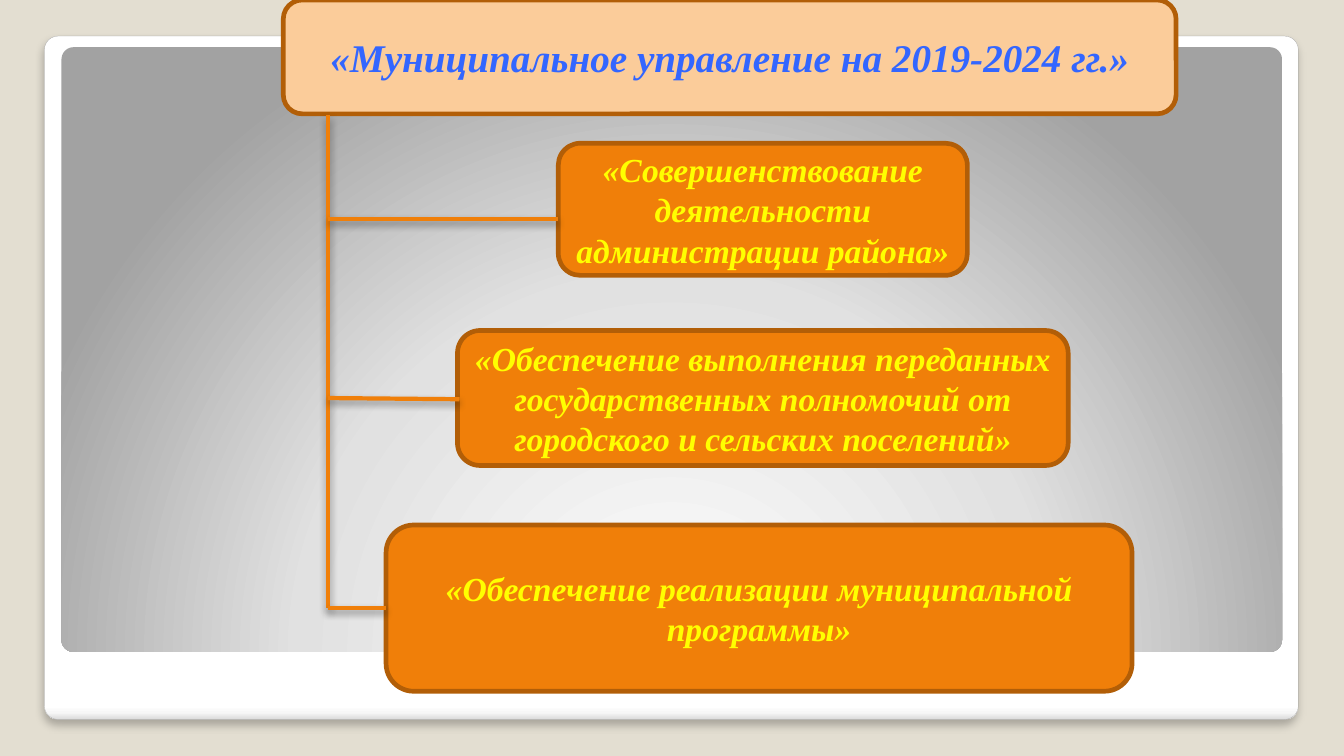
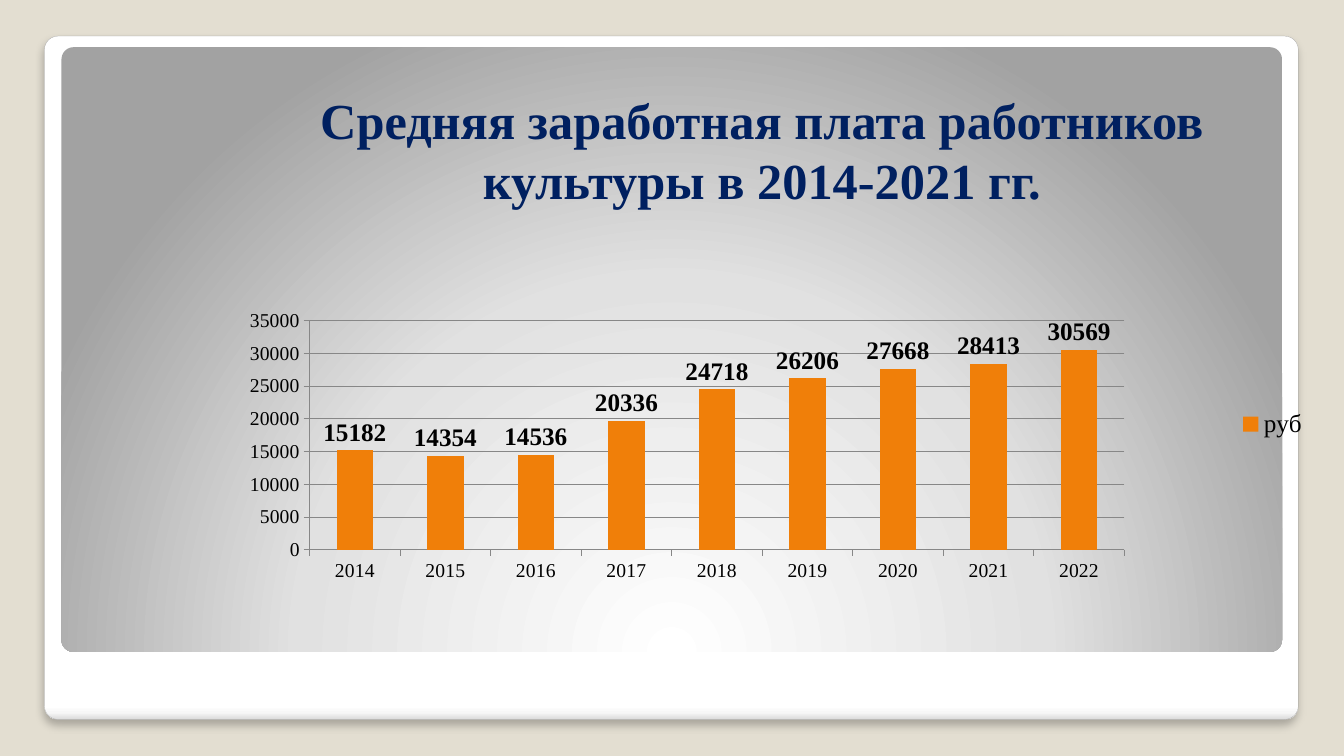
from lxml.etree import SubElement
from pptx import Presentation
from pptx.chart.data import CategoryChartData
from pptx.dml.color import RGBColor
from pptx.enum.chart import XL_CHART_TYPE as CHART, XL_LABEL_POSITION as LABEL, XL_LEGEND_POSITION as LEGEND
from pptx.enum.chart import XL_TICK_MARK as TICK
from pptx.enum.shapes import MSO_CONNECTOR as CONN, MSO_SHAPE as SHAPE
from pptx.enum.text import MSO_ANCHOR as ANCHOR, PP_ALIGN as ALIGN
from pptx.oxml import parse_xml
from pptx.oxml.ns import nsdecls, qn
from pptx.util import Cm, Pt

BEIGE = RGBColor(0xE3, 0xDE, 0xD1)
GRAY = RGBColor(0xA4, 0xA4, 0xA4)
AXIS = RGBColor(0x87, 0x87, 0x87)
ORANGE = RGBColor(0xF0, 0x7F, 0x09)
BROWN = RGBColor(0xB2, 0x5E, 0x07)
PEACH = RGBColor(0xFB, 0xCC, 0x9A)
YELLOW = RGBColor(0xFF, 0xFF, 0x00)
BLUE = RGBColor(0x33, 0x66, 0xFF)
NAVY = RGBColor(0x00, 0x20, 0x60)
BLACK = RGBColor(0x00, 0x00, 0x00)
SERIF = "Times New Roman"


def add_shadow(shape, alpha, blur, dist):
    shape.element.spPr.append(parse_xml(
        f'<a:effectLst {nsdecls("a")}><a:outerShdw blurRad="{Pt(blur)}" dist="{Pt(dist)}" '
        f'dir="5400000" algn="t" rotWithShape="0"><a:srgbClr val="000000">'
        f'<a:alpha val="{alpha * 1000}"/></a:srgbClr></a:outerShdw></a:effectLst>'))


def write(tf, text, size, color, italic=False):
    tf.word_wrap = True
    tf.text = text
    p = tf.paragraphs[0]
    p.alignment = ALIGN.CENTER
    font = p.runs[0].font
    font.name, font.size, font.bold, font.italic = SERIF, Pt(size), True, italic
    font.color.rgb = color


prs = Presentation()
prs.slide_width, prs.slide_height = Cm(33.87), Cm(19.05)
blank = prs.slide_layouts[6]
master = prs.slide_master
master.background.fill.solid()
master.background.fill.fore_color.rgb = BEIGE

s = prs.slides.add_slide(blank)
frames = [
    ((1.12, 0.91, 31.6, 17.22),
     [(0, "FFFFFF"), (98, "FFFFFF"), (99, "F7F7F7"), (100, "DADADA")],
     '<a:lin ang="5400000" scaled="0"/>'),
    ((1.55, 1.19, 30.76, 15.24),
     [(0, "FFFFFF"), (55, "E1E1E1"), (100, "A2A2A2")],
     '<a:path path="circle"><a:fillToRect l="50000" t="175000" r="50000" b="-75000"/></a:path>'),
]
for i, (box, stops, direction) in enumerate(frames):
    sp = s.shapes.add_shape(SHAPE.ROUNDED_RECTANGLE, *map(Cm, box))
    sp.adjustments[0] = 0.02
    gs = "".join(f'<a:gs pos="{pos * 1000}"><a:srgbClr val="{color}"/></a:gs>' for pos, color in stops)
    sp.element.spPr.append(parse_xml(
        f'<a:gradFill {nsdecls("a")} rotWithShape="1"><a:gsLst>{gs}</a:gsLst>{direction}</a:gradFill>'))
    if i == 0:
        sp.line.color.rgb = GRAY
        sp.line.width = Pt(0.16)
        add_shadow(sp, 25, 6, 4)
    else:
        sp.line.fill.background()
        sp.shadow.inherit = False
    sp.element.nvSpPr.cNvPr.set("id", str(101 + i))
    master.shapes.element.insert(2 + i, sp.element)

programs = [
    ("«Муниципальное управление на 2019-2024 гг.»", (7.14, 0, 22.5, 2.87), PEACH, BLUE, 28),
    ("«Совершенствование деятельности администрации района»",
     (14.07, 3.61, 10.31, 3.33), ORANGE, YELLOW, 24),
    ("«Обеспечение выполнения переданных государственных полномочий от городского и сельских поселений»",
     (11.53, 8.33, 15.39, 3.4), ORANGE, YELLOW, 24),
    ("«Обеспечение реализации муниципальной программы»",
     (9.73, 13.23, 18.8, 4.19), ORANGE, YELLOW, 24),
]
for text, box, fill, color, size in programs:
    sp = s.shapes.add_shape(SHAPE.ROUNDED_RECTANGLE, *map(Cm, box))
    sp.shadow.inherit = False
    sp.fill.solid()
    sp.fill.fore_color.rgb = fill
    sp.line.color.rgb = BROWN
    sp.line.width = Pt(3.35)
    sp.text_frame.vertical_anchor = ANCHOR.MIDDLE
    write(sp.text_frame, text, size, color, italic=True)

trunk = 8.26
lines = [
    (trunk, 2.9, trunk, 15.32),
    (trunk, 5.51, 14.07, 5.51),
    (trunk, 10.03, 11.58, 10.06),
    (trunk, 15.32, 9.73, 15.32),
]
for ends in lines:
    line = s.shapes.add_connector(CONN.STRAIGHT, *map(Cm, ends))
    line.line.color.rgb = ORANGE
    line.line.width = Pt(3)
    add_shadow(line, 40, 5.2, 3)

s = prs.slides.add_slide(blank)
title = s.shapes.add_textbox(Cm(6.22), Cm(2.11), Cm(25.96), Cm(3.33))
write(title.text_frame, "Средняя заработная плата работников культуры в 2014-2021 гг.", 36, NAVY)

data = CategoryChartData()
data.categories = [str(year) for year in range(2014, 2023)]
data.add_series("руб", [15182, 14354, 14536, 19700, 24487, 26206, 27668, 28413, 30569])
chart = s.shapes.add_chart(CHART.COLUMN_CLUSTERED, Cm(3.56), Cm(5.89), Cm(29.67), Cm(9.6), data).chart
chart.has_title = False
chart.font.name, chart.font.size = SERIF, Pt(18)
chart.font.color.rgb = BLACK
chart.has_legend = True
chart.legend.position = LEGEND.RIGHT
chart.legend.include_in_layout = False

for axis in (chart.category_axis, chart.value_axis):
    axis.tick_labels.font.size = Pt(14)
    axis.tick_labels.font.name = SERIF
    axis.major_tick_mark = TICK.OUTSIDE
    axis.format.line.color.rgb = AXIS
values = chart.value_axis
values.minimum_scale, values.maximum_scale, values.major_unit = 0, 35000, 5000
values.has_major_gridlines = True
values.major_gridlines.format.line.color.rgb = AXIS

plot = chart.plots[0]
plot.gap_width = 150
plot.vary_by_categories = False
series = plot.series[0]
series.format.fill.solid()
series.format.fill.fore_color.rgb = ORANGE
labels = series.data_labels
labels.show_value = True
labels.position = LABEL.OUTSIDE_END
labels.font.name, labels.font.size, labels.font.bold = SERIF, Pt(18), True
for i, text in ((3, "20336"), (4, "24718")):
    label = series.points[i].data_label
    write(label.text_frame, text, 18, BLACK)
    label.position = LABEL.OUTSIDE_END

area = chart.element.find(".//" + qn("c:plotArea"))
layout = area.find(qn("c:layout"))
if layout is None:
    layout = parse_xml(f'<c:layout {nsdecls("c")}/>')
    area.insert(0, layout)
manual = SubElement(layout, qn("c:manualLayout"))
for tag, value in (("layoutTarget", "inner"), ("xMode", "edge"), ("yMode", "edge"),
                   ("x", "0.143"), ("y", "0.228"), ("w", "0.692"), ("h", "0.602")):
    SubElement(manual, qn("c:" + tag)).set("val", value)

prs.save("out.pptx")
